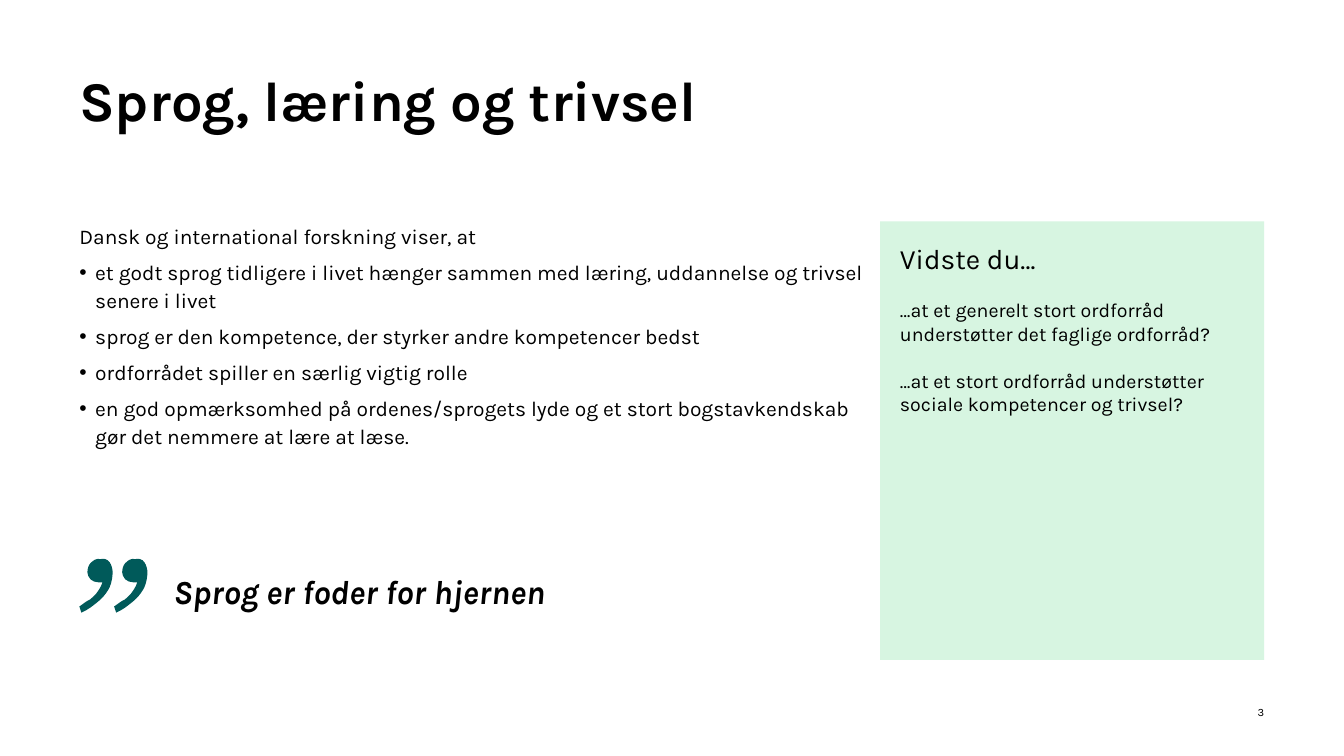
from lxml import etree
from pptx import Presentation
from pptx import util as u
from pptx.dml.color import RGBColor
from pptx.enum import shapes, text
from pptx.oxml.ns import qn

COLOURS = {"ink": "000000", "panel": "D7F5E1", "quote": "005A5A"}
FONT = "Karla"
LEFT = 2
INDENT = u.Cm(0.4)

FINDINGS = [
    "et godt sprog tidligere i livet hænger sammen med læring, uddannelse og trivsel senere i livet",
    "sprog er den kompetence, der styrker andre kompetencer bedst",
    "ordforrådet spiller en særlig vigtig rolle",
    "en god opmærksomhed på ordenes/sprogets lyde og et stort bogstavkendskab "
    "gør det nemmere at lære at læse.",
]
FACTS = [
    "…at et generelt stort ordforråd understøtter det faglige ordforråd?",
    "…at et stort ordforråd understøtter sociale kompetencer og trivsel?",
]

MARK_START = (42, 4)
MARK_CURVES = [
    [(34, 2), (28, 6), (22, 12)],
    [(18, 16), (16, 24), (16, 30)],
    [(16, 34), (18, 40), (22, 44)],
    [(26, 48), (32, 50), (38, 50)],
    [(46, 50)],
    [(44, 56), (42, 60), (38, 66)],
    [(36, 70), (32, 74), (28, 78)],
    [(24, 82), (20, 86), (14, 88)],
    [(10, 92), (4, 94), (0, 98)],
    [(4, 110)],
    [(10, 108), (16, 104), (22, 100)],
    [(30, 94), (38, 88), (44, 82)],
    [(50, 76), (56, 68), (60, 60)],
    [(64, 50), (66, 40), (66, 30)],
    [(66, 24), (64, 16), (60, 10)],
    [(56, 4), (48, 2), (42, 4)],
]
MARK_OFFSETS = (0, 69)
MARK_UNIT = u.Cm(2.54) / 200


def colour(name):
    return RGBColor.from_string(COLOURS[name])


def place(part, left, top, width, height):
    part.left, part.top = u.Cm(left), u.Cm(top)
    part.width, part.height = u.Cm(width), u.Cm(height)


def prepare_frame(part, margins=(0, 0, 0, 0)):
    frame = part.text_frame
    frame.word_wrap = True
    frame.auto_size = text.MSO_AUTO_SIZE.NONE
    frame.vertical_anchor = text.MSO_ANCHOR.TOP
    frame.margin_left, frame.margin_top, frame.margin_right, frame.margin_bottom = map(u.Cm, margins)
    return frame


def set_bullet(paragraph, bullet):
    properties = paragraph._p.get_or_add_pPr()
    properties.set("marL", str(INDENT if bullet else 0))
    properties.set("indent", str(-INDENT if bullet else 0))
    if bullet:
        etree.SubElement(properties, qn("a:buFont"), typeface="Arial")
        etree.SubElement(properties, qn("a:buChar"), char="•")
    else:
        etree.SubElement(properties, qn("a:buNone"))


def write(paragraph, words, size, bold=False, italic=False, before=0, line=1.0,
          align=text.PP_ALIGN.LEFT, bullet=False):
    paragraph.alignment = align
    paragraph.line_spacing = line
    paragraph.space_before = u.Pt(before)
    paragraph.space_after = u.Pt(0)
    set_bullet(paragraph, bullet)
    run = paragraph.add_run()
    run.text = words
    run.font.name = FONT
    run.font.size = u.Pt(size)
    run.font.bold = bold
    run.font.italic = italic
    run.font.color.rgb = colour("ink")


def paint(shape, name):
    shape.shadow.inherit = False
    shape.fill.solid()
    shape.fill.fore_color.rgb = colour(name)
    shape.line.fill.background()


def fill_title(title):
    place(title, LEFT, 1.8, 29.87, 3.2)
    write(prepare_frame(title).paragraphs[0], "Sprog, læring og trivsel", 40, bold=True, line=0.93)


def fill_findings(body):
    place(body, LEFT, 5.57, 19.95, 6.32)
    frame = prepare_frame(body)
    write(frame.paragraphs[0], "Dansk og international forskning viser, at", 15, before=6, line=1.1)
    for finding in FINDINGS:
        write(frame.add_paragraph(), finding, 15, before=6, line=1.1, bullet=True)


def fill_quote(body):
    place(body, 4.37, 14.28, 10.87, 1.14)
    write(prepare_frame(body).paragraphs[0], "Sprog er foder for hjernen", 24,
          bold=True, italic=True, before=6, line=1.1)


def add_fact_panel(slide):
    panel = slide.shapes.add_shape(shapes.MSO_SHAPE.RECTANGLE, u.Cm(22.18), u.Cm(5.58),
                                   u.Cm(9.68), u.Cm(11.05))
    paint(panel, "panel")
    frame = prepare_frame(panel, (0.5, 0.5, 1, 0.5))
    write(frame.paragraphs[0], "Vidste du…", 20)
    for fact in FACTS:
        write(frame.add_paragraph(), fact, 14, before=16.7)


def round_corners(outline):
    lines = iter(list(outline.iter(qn("a:lnTo"))))
    for controls in MARK_CURVES * len(MARK_OFFSETS):
        group = [next(lines) for _ in controls]
        if len(group) == 3:
            curve = etree.Element(qn("a:cubicBezTo"))
            group[0].addprevious(curve)
            for line in group:
                curve.append(line[0])
                line.getparent().remove(line)


def add_quote_marks(slide):
    points = [point for controls in MARK_CURVES for point in controls]
    builder = slide.shapes.build_freeform(*MARK_START, scale=MARK_UNIT)
    for offset in MARK_OFFSETS:
        if offset:
            builder.move_to(MARK_START[0] + offset, MARK_START[1])
        builder.add_line_segments([(x + offset, y) for x, y in points], close=True)
    marks = builder.convert_to_shape(u.Cm(LEFT), u.Cm(14.04))
    round_corners(marks._element)
    paint(marks, "quote")


def add_page_number(slide):
    number = slide.shapes.add_textbox(u.Cm(30.31), u.Cm(17.78), u.Cm(1.55), u.Cm(0.51))
    write(prepare_frame(number).paragraphs[0], "3", 8, align=text.PP_ALIGN.RIGHT)


def main():
    deck = Presentation()
    deck.slide_width, deck.slide_height = u.Cm(33.87), u.Cm(19.05)
    slide = deck.slides.add_slide(deck.slide_layouts[3])
    title, findings, quote = slide.placeholders
    fill_title(title)
    fill_findings(findings)
    add_page_number(slide)
    add_fact_panel(slide)
    add_quote_marks(slide)
    fill_quote(quote)
    deck.save("out.pptx")


if __name__ == "__main__":
    main()
